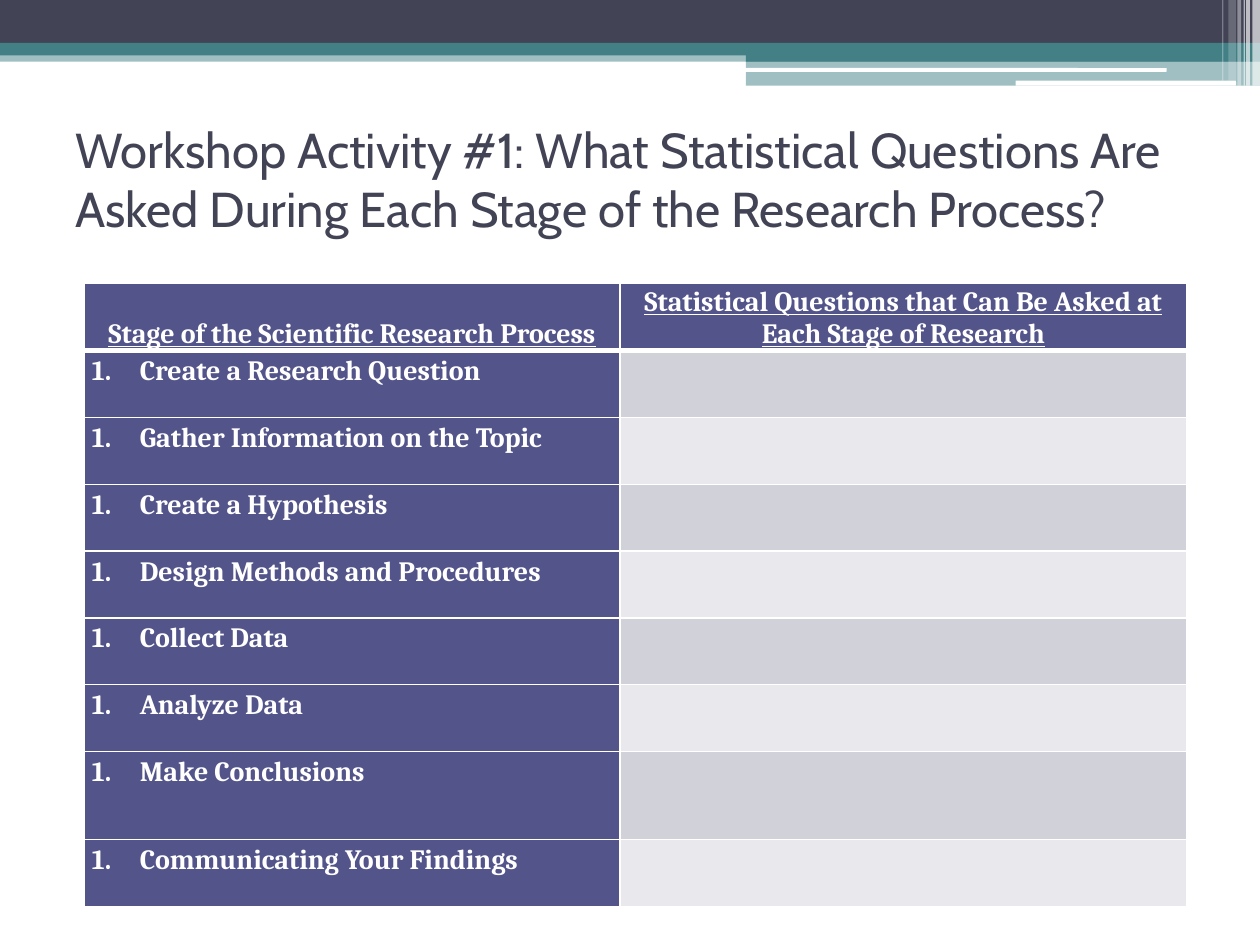
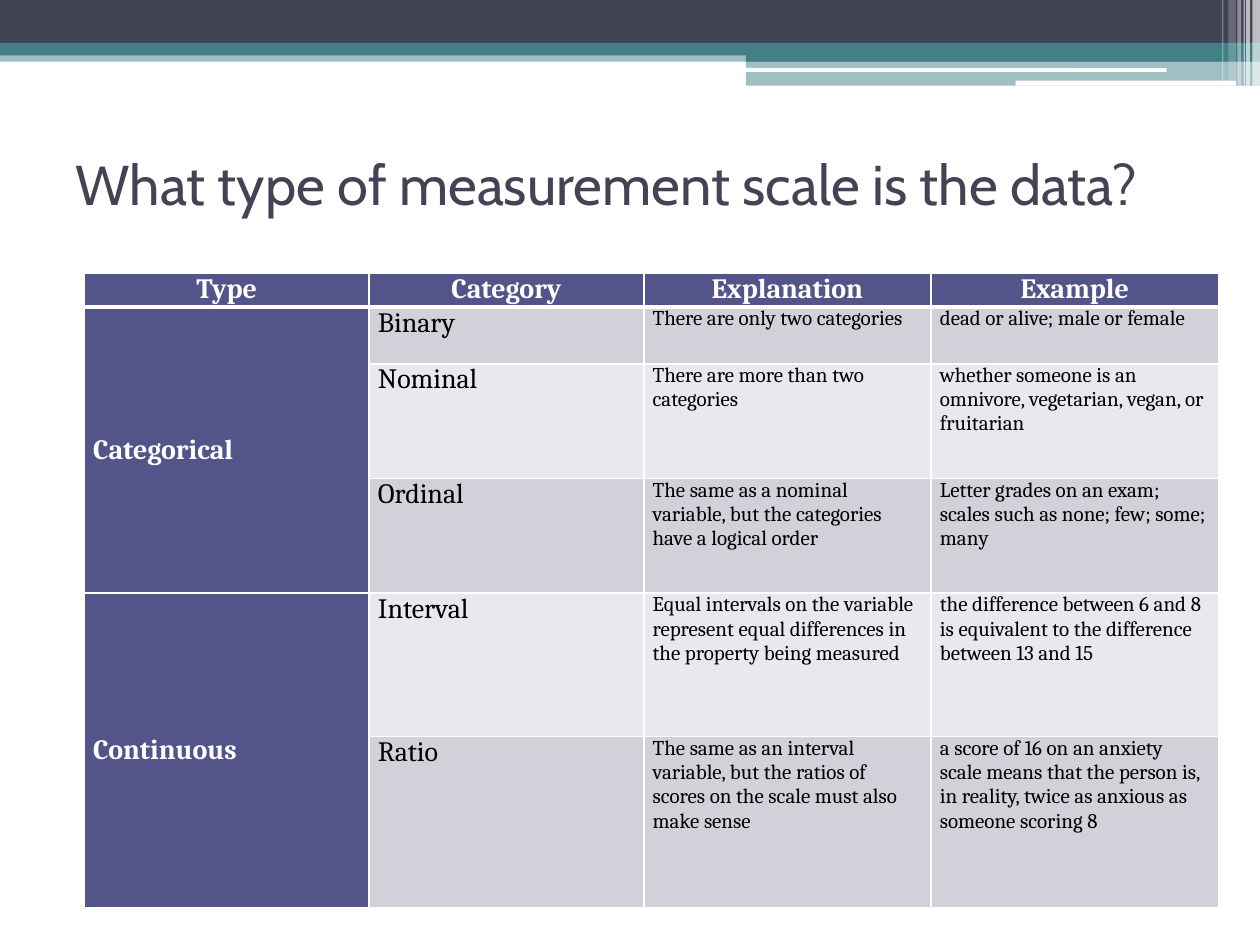
from dataclasses import dataclass
from typing import NamedTuple

from lxml.etree import SubElement
from pptx import Presentation
from pptx.dml.color import RGBColor
from pptx.enum.shapes import MSO_SHAPE
from pptx.enum.text import MSO_ANCHOR, PP_ALIGN
from pptx.oxml.ns import qn
from pptx.util import Inches, Pt


@dataclass(frozen=True)
class Theme:
    navy: str = "424456"
    teal: str = "438086"
    white: str = "FFFFFF"
    black: str = "000000"
    head: str = "53548A"
    bands: tuple = ("D1D1DA", "E9E9ED")
    title_font: str = "Cabin"
    body_font: str = "Cambria"
    label_size: int = 16
    detail_size: int = 12


class Band(NamedTuple):
    left: float
    top: float
    width: float
    height: float
    color: str
    opacity: int = 100
    shape: MSO_SHAPE = MSO_SHAPE.RECTANGLE


class CellStyle(NamedTuple):
    fill: str
    color: str
    size: int
    bold: bool = False
    underline: bool = False
    align: PP_ALIGN = PP_ALIGN.LEFT
    anchor: MSO_ANCHOR = MSO_ANCHOR.TOP
    numbered: bool = False
    rule: int = 1


class Grid(NamedTuple):
    top: float
    cols: tuple
    rows: tuple
    inset: float


THEME = Theme()

BANDS = (
    Band(0, 0.4, 10, 0.09, THEME.teal, 50),
    Band(0, 0, 10, 0.34, THEME.navy),
    Band(0, 0.34, 10, 0.1, THEME.teal),
    Band(5.92, 0.39, 4.08, 0.1, THEME.teal),
    Band(5.92, 0.48, 4.08, 0.2, THEME.teal, 50),
    Band(5.91, 0.54, 3.35, 0.03, THEME.white, shape=MSO_SHAPE.ROUNDED_RECTANGLE),
    Band(8.06, 0.64, 1.75, 0.04, THEME.white, shape=MSO_SHAPE.ROUNDED_RECTANGLE),
    Band(9.94, 0, 0.06, 0.68, THEME.white, 65),
    Band(9.89, 0, 0.03, 0.68, THEME.white, 65),
    Band(9.87, 0, 0.01, 0.68, THEME.white, 60),
    Band(9.82, 0, 0.03, 0.68, THEME.white, 40),
    Band(9.75, 0, 0.06, 0.64, THEME.white, 20),
    Band(9.7, 0, 0.01, 0.64, THEME.white, 30),
)

STAGES = (
    "Create a Research Question",
    "Gather Information on the Topic",
    "Create a Hypothesis",
    "Design Methods and Procedures",
    "Collect Data",
    "Analyze Data",
    "Make Conclusions",
    "Communicating Your Findings",
)

SCALES = (
    ("Categorical", "Binary", "There are only two categories", "dead or alive; male or female"),
    ("", "Nominal", "There are more than two categories",
     "whether someone is an omnivore, vegetarian, vegan, or fruitarian"),
    ("", "Ordinal", "The same as a nominal variable, but the categories have a logical order",
     "Letter grades on an exam; scales such as none; few; some; many"),
    ("Continuous", "Interval",
     "Equal intervals on the variable represent equal differences in the property being measured",
     "the difference between 6 and 8 is equivalent to the difference between 13 and 15"),
    ("", "Ratio",
     "The same as an interval variable, but the ratios of scores on the scale must also make sense",
     "a score of 16 on an anxiety scale means that the person is, in reality, "
     "twice as anxious as someone scoring 8"),
)


def rgb(color: str) -> RGBColor:
    return RGBColor.from_string(color)


def draw_band(s, band: Band) -> None:
    sp = s.shapes.add_shape(band.shape, Inches(band.left), Inches(band.top),
                            Inches(band.width), Inches(band.height))
    sp.shadow.inherit = False
    sp.line.fill.background()
    sp.fill.solid()
    sp.fill.fore_color.rgb = rgb(band.color)
    if band.opacity < 100:
        clr = sp._element.spPr.find(qn("a:solidFill")).find(qn("a:srgbClr"))
        SubElement(clr, qn("a:alpha"), val=str(band.opacity * 1000))


def add_titled_slide(prs, title: str, size: int, height: float):
    s = prs.slides.add_slide(prs.slide_layouts[6])
    for band in BANDS:
        draw_band(s, band)
    tf = s.shapes.add_textbox(Inches(0.5), Inches(0.83), Inches(9), Inches(height)).text_frame
    tf.word_wrap = True
    tf.vertical_anchor = MSO_ANCHOR.MIDDLE
    p = tf.paragraphs[0]
    p.text = title
    p.font.name = THEME.title_font
    p.font.size = Pt(size)
    p.font.color.rgb = rgb(THEME.navy)
    return s


def add_borders(cell, bottom: int) -> None:
    tc_pr = cell._tc.get_or_add_tcPr()
    for side, width in (("L", 1), ("R", 1), ("T", 1), ("B", bottom)):
        ln = SubElement(tc_pr, qn(f"a:ln{side}"), w=str(Pt(width)))
        SubElement(SubElement(ln, qn("a:solidFill")), qn("a:srgbClr"), val=THEME.white)


def number_paragraph(p) -> None:
    p.line_spacing = 1.15
    p_pr = p._p.get_or_add_pPr()
    p_pr.set("marL", str(Inches(0.38)))
    p_pr.set("indent", str(Inches(-0.38)))
    SubElement(p_pr, qn("a:buAutoNum"), type="arabicPeriod")


def fill_cell(cell, text: str, style: CellStyle, inset: float) -> None:
    add_borders(cell, style.rule)
    cell.fill.solid()
    cell.fill.fore_color.rgb = rgb(style.fill)
    cell.margin_left = cell.margin_right = Inches(inset)
    cell.margin_top = cell.margin_bottom = 0
    cell.vertical_anchor = style.anchor
    p = cell.text_frame.paragraphs[0]
    p.text = text
    p.alignment = style.align
    if style.numbered:
        number_paragraph(p)
    p.font.name = THEME.body_font
    p.font.size = Pt(style.size)
    p.font.bold = style.bold
    p.font.underline = style.underline
    p.font.color.rgb = rgb(style.color)


def add_grid(s, grid: Grid, header: tuple, body: tuple, head: CellStyle, label: CellStyle):
    table = s.shapes.add_table(len(grid.rows), len(grid.cols), Inches(0.67), Inches(grid.top),
                               Inches(sum(grid.cols)), Inches(sum(grid.rows))).table
    table.first_col = True
    for col, width in zip(table.columns, grid.cols):
        col.width = Inches(width)
    for row, height in zip(table.rows, grid.rows):
        row.height = Inches(height)
    for j, text in enumerate(header):
        fill_cell(table.cell(0, j), text, head, grid.inset)
    for i, texts in enumerate(body):
        for j, text in enumerate(texts):
            size = THEME.label_size if j == 1 else THEME.detail_size
            style = CellStyle(THEME.bands[i % 2], THEME.black, size) if j else label
            fill_cell(table.cell(i + 1, j), text, style, grid.inset)
    return table


def main() -> None:
    prs = Presentation()
    prs.slide_width, prs.slide_height = Inches(10), Inches(7.5)
    label = CellStyle(THEME.head, THEME.white, THEME.label_size, bold=True)
    head = label._replace(align=PP_ALIGN.CENTER, rule=3)

    s = add_titled_slide(prs, "Workshop Activity #1: What Statistical Questions Are Asked "
                              "During Each Stage of the Research Process?", 28, 1.17)
    add_grid(s, Grid(2.25, (4.25, 4.5), (0.53,) * 7 + (0.7, 0.53), 0.06),
             ("Stage of the Scientific Research Process",
              "Statistical Questions that Can Be Asked at Each Stage of Research"),
             tuple((stage, "") for stage in STAGES),
             head._replace(underline=True, anchor=MSO_ANCHOR.BOTTOM),
             label._replace(numbered=True))

    s = add_titled_slide(prs, "What type of measurement scale is the data?", 32, 1.25)
    table = add_grid(s, Grid(2.17, (2.26, 2.18, 2.28, 2.28),
                             (0.23, 0.45, 0.91, 0.91, 1.14, 1.36), 0.07),
                     ("Type", "Category", "Explanation", "Example"), SCALES,
                     head, label._replace(anchor=MSO_ANCHOR.MIDDLE))
    for first, last in ((1, 3), (4, 5)):
        table.cell(first, 0).merge(table.cell(last, 0))

    prs.save("out.pptx")


if __name__ == "__main__":
    main()
